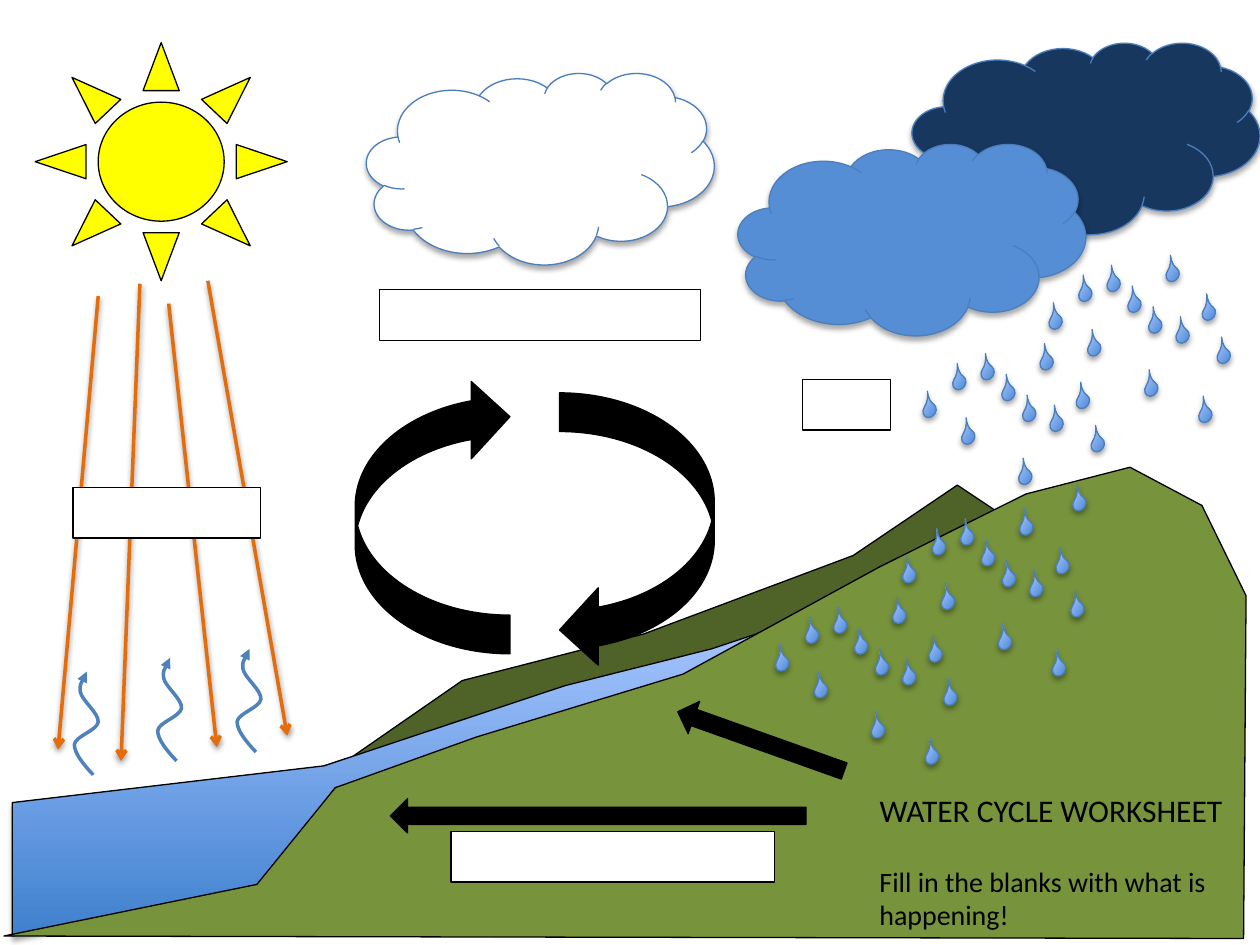
"""Build the water cycle worksheet slide."""
from itertools import product

from lxml import etree
from pptx import Presentation
from pptx.dml.color import RGBColor
from pptx.enum.shapes import MSO_CONNECTOR, MSO_SHAPE
from pptx.enum.text import MSO_ANCHOR, MSO_AUTO_SIZE, PP_ALIGN
from pptx.oxml.ns import qn
from pptx.util import Cm, Pt

RECT, CLOUD, SUN = MSO_SHAPE.RECTANGLE, MSO_SHAPE.CLOUD, MSO_SHAPE.SUN
TEAR, RIGHT_ARROW = MSO_SHAPE.TEAR, MSO_SHAPE.RIGHT_ARROW
CURVED_ARROW, STRAIGHT = MSO_SHAPE.CURVED_LEFT_ARROW, MSO_CONNECTOR.STRAIGHT
LEFT, TOP, NO_RESIZE = PP_ALIGN.LEFT, MSO_ANCHOR.TOP, MSO_AUTO_SIZE.NONE

BLACK = RGBColor(0x00, 0x00, 0x00)
WHITE = RGBColor(0xFF, 0xFF, 0xFF)
YELLOW = RGBColor(0xFF, 0xFF, 0x00)
ORANGE = RGBColor(0xE4, 0x6C, 0x0A)
DARK_GREEN = RGBColor(0x4F, 0x62, 0x28)
GREEN = RGBColor(0x77, 0x93, 0x3C)
NAVY = RGBColor(0x17, 0x37, 0x5E)
SKY = RGBColor(0x55, 0x8E, 0xD5)
EDGE_BLUE = RGBColor(0x4B, 0x7E, 0xBC)
VAPOR_BLUE = RGBColor(0x4F, 0x81, 0xBD)
WATER = (RGBColor(0x3F, 0x80, 0xCE), RGBColor(0xA4, 0xC4, 0xFF))

SHAPE_SHADOW, RAY_SHADOW = (35, 3.1, 1.8), (38, 3.1, 1.6)

FAR_HILL = [(7.01, 15.32), (9.32, 13.72), (12.98, 12.78), (17.2, 11.2),
            (19.3, 9.78), (20.14, 10.34), (15.39, 13.03), (6.76, 15.72)]
RIVER = [(0.25, 18.87), (0.25, 16.18), (6.53, 15.44), (11.4, 13.82), (14.35, 13.08),
         (15.49, 12.7), (13.92, 13.61), (6.76, 15.88), (5.23, 17.88)]
NEAR_HILL = [(0.08, 18.87), (25.07, 18.92), (25.12, 12.01), (24.23, 10.19),
             (22.78, 9.42), (20.68, 9.96), (17.73, 11.43), (13.77, 13.59),
             (9.6, 14.86), (6.76, 15.88), (5.18, 17.83)]
CLOUDS = [(18.39, 0.86, NAVY), (14.88, 2.9, SKY), (7.39, 1.47, WHITE)]
RAIN_BURSTS = [(22.3, 5.61), (19.76, 7.39), (19.35, 10.72), (16.79, 12.5)]
DROP_OFFSETS = [(0, 0), (0.42, 0.42), (0.84, 0.84), (-0.57, 0.2), (1.19, -0.2),
                (0.76, 2.11), (1.39, 1.04), (1.92, 0.58), (2.22, 1.45),
                (1.85, 2.64), (-1.17, 0.76), (-0.39, 1.3)]
RAYS = [(1.98, 5.97, 1.17, 15.11), (2.82, 5.72, 2.44, 15.34),
        (4.19, 5.66, 5.79, 14.83), (3.4, 6.12, 4.37, 15.06)]
VAPOR_TIPS = [(3.43, 13.26), (5.03, 13.08), (1.75, 13.54)]
VAPOR_CURVE = [(0.13, 2.08), (-0.08, 1.86), (-0.25, 1.64), (-0.25, 1.47),
               (-0.23, 1.3), (0.2, 1.19), (0.23, 1.02), (0.25, 0.84),
               (-0.1, 0.58), (-0.13, 0.41), (-0.15, 0.25), (0, 0), (0, 0)]
FLOW_ARROWS = [(RIGHT_ARROW, (13.56, 14.6, 3.56, 0.69), 199.6),
               (RIGHT_ARROW, (7.87, 16.1, 8.38, 0.69), 180),
               (CURVED_ARROW, (11.28, 7.92, 3.12, 5.56), 0),
               (CURVED_ARROW, (7.16, 7.62, 3.12, 5.56), 180)]
BLANKS = [(7.65, 5.84, 6.48), (16.18, 7.65, 1.78), (1.47, 9.83, 3.78), (9.09, 16.76, 6.53)]


def set_attrs(obj, values):
    """Set each attribute of obj from a dict."""
    for name, value in values.items():
        setattr(obj, name, value)


def set_line(s, color, width=0.75, head=None, shadow=None):
    """Format the outline, its end arrowhead and the shadow."""
    s.line.color.rgb = color
    s.line.width = Pt(width)
    spPr = s._element.spPr
    if head:
        etree.SubElement(spPr.find(qn("a:ln")), qn("a:tailEnd"), type=head)
    effects = etree.SubElement(spPr, qn("a:effectLst"))
    if shadow:
        alpha, blur, dist = shadow
        outer = etree.SubElement(effects, qn("a:outerShdw"), blurRad=str(Pt(blur)),
                                 dist=str(Pt(dist)), dir="5400000", rotWithShape="0")
        clr = etree.SubElement(outer, qn("a:srgbClr"), val=str(BLACK))
        etree.SubElement(clr, qn("a:alpha"), val=str(alpha * 1000))


def set_fill(s, fill):
    """Fill with one colour, or upwards with a pair of colours."""
    if isinstance(fill, RGBColor):
        s.fill.solid()
        s.fill.fore_color.rgb = fill
    else:
        s.fill.gradient()
        s.fill.gradient_angle = 90
        for stop, color in zip(s.fill.gradient_stops, fill):
            stop.color.rgb = color


def add_preset(shapes, kind, box, fill, line=BLACK, shadow=None, rotation=0):
    """Add a formatted preset shape."""
    s = shapes.add_shape(kind, *map(Cm, box))
    s.rotation = rotation
    set_fill(s, fill)
    set_line(s, line, shadow=shadow)
    return s


def add_outline(shapes, points, close=True):
    """Add a freeform through points."""
    start, *rest = [(Cm(x), Cm(y)) for x, y in points]
    builder = shapes.build_freeform(*start)
    builder.add_line_segments(rest, close=close)
    return builder.convert_to_shape()


def add_land(shapes, points, fill, shadow=None):
    """Add a closed piece of landscape."""
    s = add_outline(shapes, points)
    set_fill(s, fill)
    set_line(s, BLACK, shadow=shadow)


def add_vapor(shapes, tip_x, tip_y):
    """Add a wavy rising arrow ending at the tip."""
    s = add_outline(shapes, [(tip_x + x, tip_y + y) for x, y in VAPOR_CURVE], False)
    path = next(s._element.iter(qn("a:path")))
    segments = path.findall(qn("a:lnTo"))
    for i in range(0, len(segments), 3):
        curve = etree.SubElement(path, qn("a:cubicBezTo"))
        for segment in segments[i:i + 3]:
            curve.append(segment[0])
            path.remove(segment)
    s.fill.background()
    set_line(s, VAPOR_BLUE, 2, "triangle")


def add_ray(shapes, ends):
    """Add a sun ray with an open arrowhead."""
    set_line(shapes.add_connector(STRAIGHT, *map(Cm, ends)), ORANGE, 2, "arrow", RAY_SHADOW)


def add_drop(shapes, x, y):
    """Add a tilted raindrop."""
    s = add_preset(shapes, TEAR, (x, y, 0.3, 0.25), WATER, EDGE_BLUE, SHAPE_SHADOW, 303.4)
    s.adjustments[0] = 2


def set_text(s, box, text, size):
    """Place a text shape and format its single paragraph."""
    set_attrs(s, dict(zip(("left", "top", "width", "height"), map(Cm, box))))
    tf = s.text_frame
    tf.text = text
    set_attrs(tf, {"word_wrap": True, "auto_size": NO_RESIZE, "vertical_anchor": TOP})
    p = tf.paragraphs[0]
    p.alignment = LEFT
    set_attrs(p.font, {"name": "Calibri", "size": Pt(size)})
    p.font.color.rgb = BLACK


def main():
    """Draw the landscape, the cycle and the text."""
    prs = Presentation()
    set_attrs(prs, {"slide_width": Cm(25.4), "slide_height": Cm(19.05)})
    shapes = prs.slides.add_slide(prs.slide_layouts[5]).shapes
    add_land(shapes, FAR_HILL, DARK_GREEN)
    add_land(shapes, RIVER, WATER, SHAPE_SHADOW)
    for x, y, color in CLOUDS:
        add_preset(shapes, CLOUD, (x, y, 7.01, 3.86), color, EDGE_BLUE, SHAPE_SHADOW)
    add_preset(shapes, SUN, (0.71, 0.86, 5.08, 4.8), YELLOW)
    add_land(shapes, NEAR_HILL, GREEN)
    rain = shapes.add_group_shape().shapes
    for (x, y), (dx, dy) in product(RAIN_BURSTS, DROP_OFFSETS):
        add_drop(rain, x + dx, y + dy)
    sunlight = shapes.add_group_shape().shapes
    for ends in RAYS:
        add_ray(sunlight, ends)
    for tip in VAPOR_TIPS:
        add_vapor(shapes, *tip)
    for kind, box, rotation in FLOW_ARROWS:
        add_preset(shapes, kind, box, BLACK, rotation=rotation)
    for x, y, width in BLANKS:
        add_preset(shapes, RECT, (x, y, width, 1.02), WHITE)
    title = shapes.title
    shapes._spTree.append(title._element)
    set_text(title, (17.48, 15.82, 7.65, 1.02), "WATER CYCLE WORKSHEET", 18)
    box = (17.48, 17.3, 7.65, 1.6)
    set_text(shapes.add_textbox(*map(Cm, box)), box,
             "Fill in the blanks with what is happening!", 16)
    prs.save("out.pptx")


if __name__ == "__main__":
    main()
